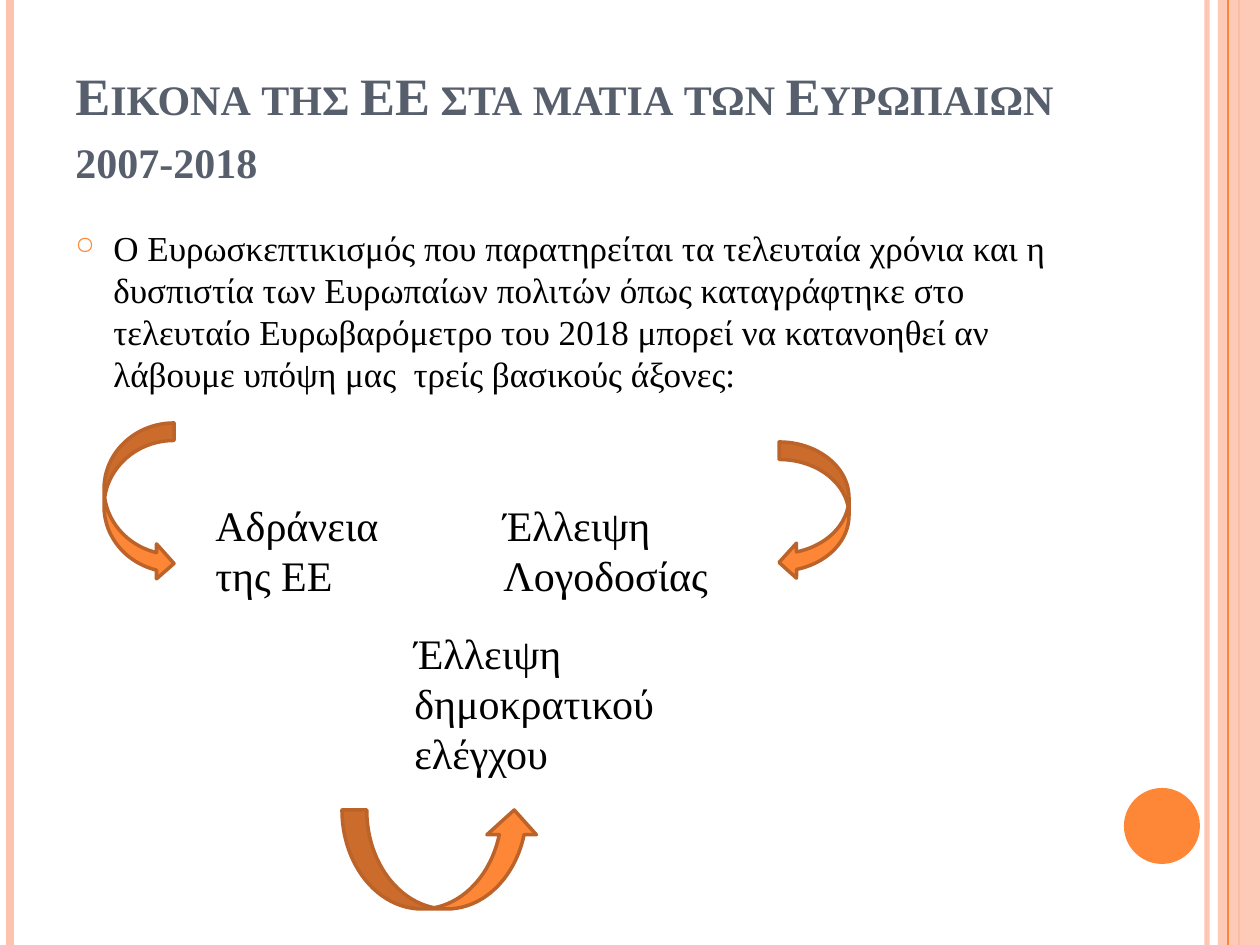
import pptx
import pptx.util
import pptx.dml.color
import pptx.enum.shapes
import pptx.enum.text
import pptx.oxml
import pptx.oxml.ns
from lxml import etree

PX = 914400 / 126
FONT = "Times New Roman"
SHAPE = pptx.enum.shapes.MSO_SHAPE
ANCHOR = pptx.enum.text.MSO_ANCHOR
RGBColor = pptx.dml.color.RGBColor
ORANGE = RGBColor(0xFE, 0x86, 0x37)
PEACH = RGBColor(0xFE, 0xC3, 0xAE)
RUST = RGBColor(0xBC, 0x63, 0x29)
SLATE = RGBColor(0x57, 0x5F, 0x6D)
BLACK = RGBColor(0, 0, 0)
SLIDE_WIDTH, SLIDE_HEIGHT = 1260, 945


def px(length):
    return pptx.util.Emu(round(length * PX))


def add_child(parent, tag, **attributes):
    return etree.SubElement(parent, pptx.oxml.ns.qn(tag), attributes)


def set_opacity(properties, percent):
    color = next(properties.iter(pptx.oxml.ns.qn("a:srgbClr")))
    add_child(color, "a:alpha", val=str(percent * 1000))


def add_stripe(slide, x, color, width, opacity=100):
    stripe = slide.shapes.add_connector(
        pptx.enum.shapes.MSO_CONNECTOR.STRAIGHT, px(x), 0, px(x), px(SLIDE_HEIGHT))
    stripe.line.color.rgb = color
    stripe.line.width = pptx.util.Pt(width)
    properties = stripe._element.spPr
    if opacity < 100:
        set_opacity(properties, opacity)
    add_child(properties, "a:effectLst")


def add_figure(slide, preset, box, fill, outline=None, opacity=100):
    figure = slide.shapes.add_shape(preset, *map(px, box))
    figure.shadow.inherit = False
    figure.fill.solid()
    figure.fill.fore_color.rgb = fill
    if opacity < 100:
        set_opacity(figure._element.spPr, opacity)
    if outline is None:
        figure.line.fill.background()
    else:
        figure.line.color.rgb = outline
        figure.line.width = pptx.util.Pt(2)


def add_text(slide, box, text, size, color=BLACK, anchor=ANCHOR.TOP):
    frame = slide.shapes.add_textbox(*map(px, box)).text_frame
    frame.word_wrap = True
    frame.vertical_anchor = anchor
    frame.text = text
    paragraph = frame.paragraphs[0]
    font = paragraph.runs[0].font
    font.name = FONT
    font.size = pptx.util.Pt(size)
    font.color.rgb = color
    return paragraph


def add_title(slide, box, text):
    title = add_text(slide, box, text, 30, SLATE, ANCHOR.BOTTOM).runs[0]
    title.font.bold = True
    title._r.get_or_add_rPr().set("cap", "small")


def add_bullet(slide, box, text):
    properties = add_text(slide, box, text, 20)._p.get_or_add_pPr()
    indent = px(38)
    properties.set("marL", str(indent))
    properties.set("indent", str(-indent))
    bullet_color = add_child(properties, "a:buClr")
    add_child(bullet_color, "a:srgbClr", val=str(ORANGE))
    add_child(properties, "a:buSzPct", val="70000")
    add_child(properties, "a:buChar", char="○")


def add_side_decoration(slide):
    add_stripe(slide, 1207, PEACH, 3, 93)
    add_stripe(slide, 10, PEACH, 4.5)
    add_stripe(slide, 1239, ORANGE, 1.5)
    add_figure(slide, SHAPE.RECTANGLE, (1218, 0, 42, SLIDE_HEIGHT), PEACH, opacity=87)
    add_stripe(slide, 1228, ORANGE, 0.75)
    add_figure(slide, SHAPE.OVAL, (1124, 788, 76, 76), ORANGE)


def main():
    presentation = pptx.Presentation()
    presentation.slide_width = px(SLIDE_WIDTH)
    presentation.slide_height = px(SLIDE_HEIGHT)
    slide = presentation.slides.add_slide(presentation.slide_layouts[6])

    add_side_decoration(slide)
    add_title(slide, (63, 38, 1029, 157),
              "Εικονα της ΕΕ στα ματια των Ευρωπαιων 2007-2018")
    add_bullet(slide, (63, 220, 1029, 672),
               "Ο Ευρωσκεπτικισμός που παρατηρείται τα τελευταία χρόνια και η "
               "δυσπιστία των Ευρωπαίων πολιτών όπως καταγράφτηκε στο τελευταίο "
               "Ευρωβαρόμετρο του 2018 μπορεί να κατανοηθεί αν λάβουμε υπόψη μας  "
               "τρείς βασικούς άξονες:")

    axes = [
        ("Αδράνεια της ΕΕ", (203, 493, 208, 115),
         SHAPE.CURVED_RIGHT_ARROW, (104, 423, 70, 158)),
        ("Έλλειψη Λογοδοσίας", (491, 493, 277, 115),
         SHAPE.CURVED_LEFT_ARROW, (779, 442, 70, 138)),
        ("Έλλειψη δημοκρατικού ελέγχου", (402, 621, 377, 165),
         SHAPE.CURVED_UP_ARROW, (342, 810, 197, 99)),
    ]
    for label, label_box, arrow, arrow_box in axes:
        add_figure(slide, arrow, arrow_box, ORANGE, RUST)
        add_text(slide, label_box, label, 24)

    presentation.save("out.pptx")


if __name__ == "__main__":
    main()
